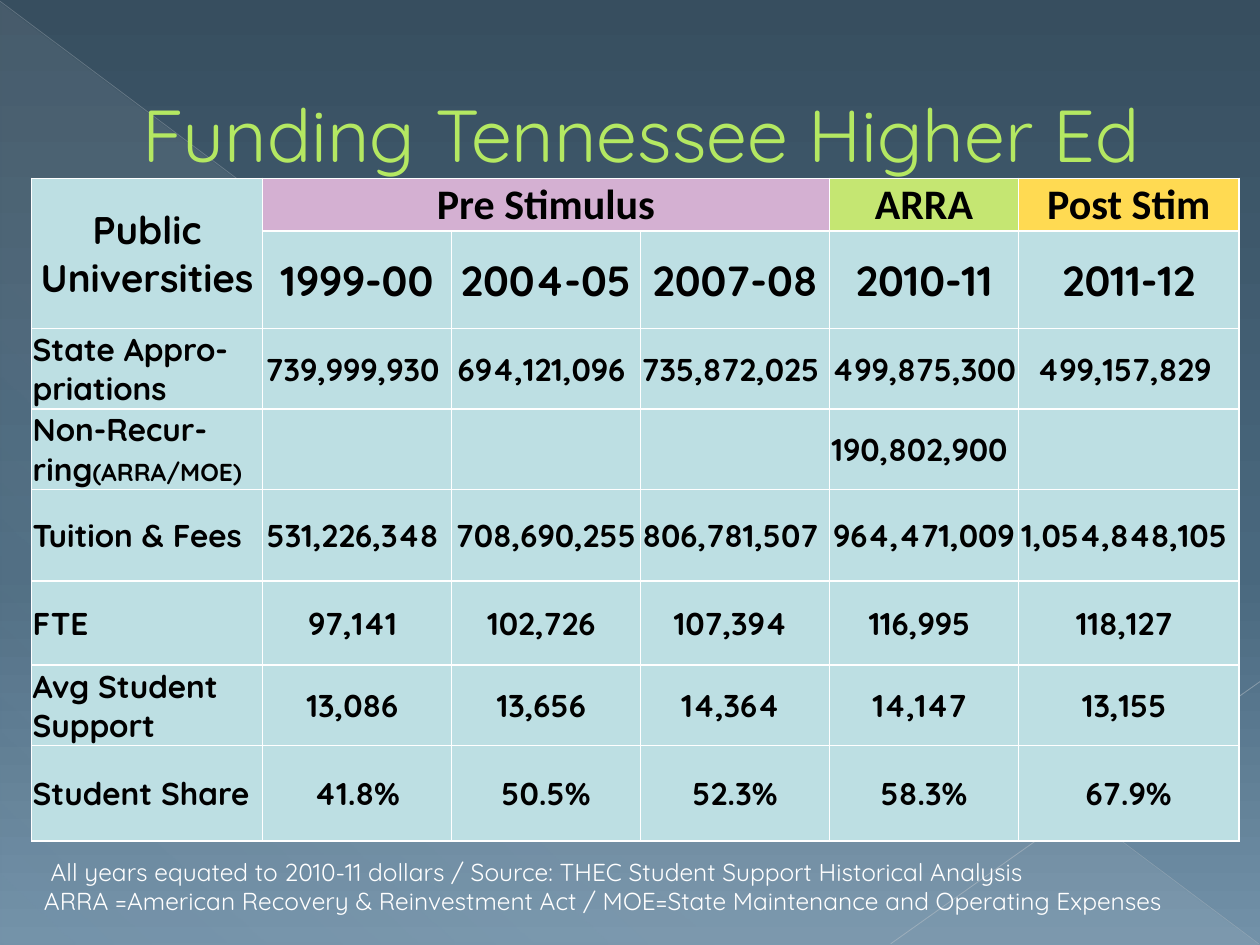
from lxml import etree
from pptx import Presentation
from pptx.dml.color import RGBColor
from pptx.enum.shapes import MSO_CONNECTOR, MSO_SHAPE
from pptx.enum.text import MSO_ANCHOR, PP_ALIGN
from pptx.oxml.ns import qn
from pptx.util import Pt

LINE = MSO_CONNECTOR.STRAIGHT
WEDGE = MSO_SHAPE.RIGHT_TRIANGLE
MID = MSO_ANCHOR.MIDDLE
LEFT, MIDDLE = PP_ALIGN.LEFT, PP_ALIGN.CENTER

FONT = "Quicksand"
BLACK, WHITE, AQUA = "000000", "FFFFFF", "BDDFE3"
COLS = [132, 108, 108, 108, 108, 126]
ROWS = [30, 55.5, 46, 46, 52.5, 48, 46, 54.5]
ERAS = [(1, "Pre Stimulus", "D4B0D2"), (4, "ARRA", "C5E672"), (5, "Post Stim", "FFDA52")]
YEARS = ["1999-00", "2004-05", "2007-08", "2010-11", "2011-12"]
DATA = [
    ("State Appro-priations", ["739,999,930 ", "694,121,096 ", "735,872,025 ", "499,875,300 ", "499,157,829 "]),
    ("Non-Recur-ring", ["", "", "", "190,802,900 ", ""]),
    ("Tuition & Fees", ["531,226,348 ", "708,690,255 ", "806,781,507 ", "964,471,009 ", "1,054,848,105 "]),
    ("FTE", ["97,141 ", "102,726 ", "107,394 ", "116,995 ", "118,127 "]),
    ("Avg Student Support", ["13,086 ", "13,656 ", "14,364 ", "14,147 ", "13,155 "]),
    ("Student Share", ["41.8%", "50.5%", "52.3%", "58.3%", "67.9%"]),
]
NOTES = [
    " All years equated to 2010-11 dollars / Source: THEC Student Support Historical Analysis",
    "ARRA =American Recovery & Reinvestment Act / MOE=State Maintenance and Operating Expenses",
]


def rgb(code):
    """Turn a hex string into a colour."""
    return RGBColor.from_string(code)


def sub(node, tag, **attrs):
    """Add a child element with attributes."""
    return etree.SubElement(node, qn(tag), {k: str(v) for k, v in attrs.items()})


def shade(fill, root, stops, angle):
    """Give a fill a linear gradient of (place, colour, opacity) stops."""
    fill.solid()
    old = root.find(".//" + qn("a:solidFill"))
    grad = etree.Element(qn("a:gradFill"), rotWithShape="1")
    group = sub(grad, "a:gsLst")
    for place, code, alpha in stops:
        stop = sub(group, "a:gs", pos=place * 1000)
        tint = sub(stop, "a:srgbClr", val=code)
        if alpha < 100:
            sub(tint, "a:alpha", val=alpha * 1000)
    sub(grad, "a:lin", ang=angle * 60000, scaled=0)
    old.getparent().replace(old, grad)


def add_run(para, text, size, code, bold=False, font=FONT):
    """Add one formatted run."""
    run = para.add_run()
    run.text = text
    run.font.name, run.font.size, run.font.bold = font, Pt(size), bold
    run.font.color.rgb = rgb(code)


def add_wedge(slide):
    """Draw the pale corner triangle."""
    wedge = slide.shapes.add_shape(WEDGE, Pt(0.5), Pt(1.5), Pt(719), Pt(538.5))
    wedge.shadow.inherit = False
    wedge.line.fill.background()
    stops = [(0, "E7ECED", 10), (70, "E7ECED", 8), (100, "E7ECED", 1)]
    shade(wedge.fill, wedge.element, stops, 133)


def add_line(slide, ends, code, width, alpha):
    """Draw a thin see-through line."""
    line = slide.shapes.add_connector(LINE, *map(Pt, ends))
    line.line.color.rgb = rgb(code)
    line.line.width = Pt(width)
    props = line.element.spPr
    sub(props.find(".//" + qn("a:srgbClr")), "a:alpha", val=alpha * 1000)
    sub(props, "a:effectLst")


def set_title(slide):
    """Place and fill the title, in front of the backdrop."""
    title = slide.shapes.title
    title.left, title.top, title.width, title.height = map(Pt, (36, 21, 648, 110))
    frame = title.text_frame
    frame.margin_left = Pt(45.4)
    frame.vertical_anchor = MID
    para = frame.paragraphs[0]
    para.alignment = LEFT
    add_run(para, "Funding Tennessee Higher Ed", 42, "B4E862")
    title.element.getparent().append(title.element)


def style(cell, code):
    """Set a cell's fill, insets and white borders."""
    cell.margin_left = cell.margin_right = cell.margin_top = Pt(0.7)
    cell.margin_bottom = 0
    cell.vertical_anchor = MID
    props = cell._tc.get_or_add_tcPr()
    for side in "LRTB":
        edge = sub(props, "a:ln" + side, w=12700)
        sub(sub(edge, "a:solidFill"), "a:srgbClr", val=WHITE)
    cell.fill.solid()
    cell.fill.fore_color.rgb = rgb(code)


def put(cell, text, size, align=MIDDLE, font=FONT):
    """Write bold black text in a cell."""
    para = cell.text_frame.paragraphs[0]
    para.alignment = align
    if text:
        add_run(para, text, size, BLACK, True, font)


def add_grid(slide):
    """Build the funding table."""
    grid = slide.shapes.add_table(
        len(ROWS), len(COLS), Pt(18), Pt(102), Pt(sum(COLS)), Pt(sum(ROWS))).table
    grid.first_row = grid.horz_banding = False
    for col, width in zip(grid.columns, COLS):
        col.width = Pt(width)
    for row, height in zip(grid.rows, ROWS):
        row.height = Pt(height)
    tints = {era[0]: era[2] for era in ERAS}
    tints.update({2: tints[1], 3: tints[1]})
    for r in range(len(ROWS)):
        for c in range(len(COLS)):
            style(grid.cell(r, c), tints.get(c, AQUA) if r == 0 else AQUA)
    grid.cell(0, 0).merge(grid.cell(1, 0))
    grid.cell(0, 1).merge(grid.cell(0, 3))
    put(grid.cell(0, 0), "Public Universities", 22)
    for c, name, _ in ERAS:
        put(grid.cell(0, c), name, 24, font="Calibri")
    for c, year in enumerate(YEARS, 1):
        put(grid.cell(1, c), year, 24)
    for r, (name, values) in enumerate(DATA, 2):
        put(grid.cell(r, 0), name, 18, LEFT)
        for c, value in enumerate(values, 1):
            put(grid.cell(r, c), value, 18)
    add_run(grid.cell(3, 0).text_frame.paragraphs[0], "(ARRA/MOE)", 14, BLACK, True)


def add_notes(slide):
    """Write the source lines below the table."""
    frame = slide.shapes.add_textbox(Pt(18), Pt(486), Pt(702), Pt(41)).text_frame
    frame.word_wrap = True
    for i, text in enumerate(NOTES):
        para = frame.add_paragraph() if i else frame.paragraphs[0]
        add_run(para, text, 14, WHITE)


def main():
    """Build and save the slide."""
    deck = Presentation()
    deck.slide_width, deck.slide_height = Pt(720), Pt(540)
    slide = deck.slides.add_slide(deck.slide_layouts[5])
    stops = [(0, "374E5F", 100), (60, "49687E", 100), (100, "7291A8", 100)]
    shade(slide.background.fill, slide.element, stops, 90)
    add_wedge(slide)
    add_line(slide, (0, 0.7, 719.3, 539.3), "BAC0C6", 0.39, 35)
    add_line(slide, (720, 389.5, 509, 539.3), "C2C7CC", 0.47, 45)
    set_title(slide)
    add_grid(slide)
    add_notes(slide)
    deck.save("out.pptx")


if __name__ == "__main__":
    main()
